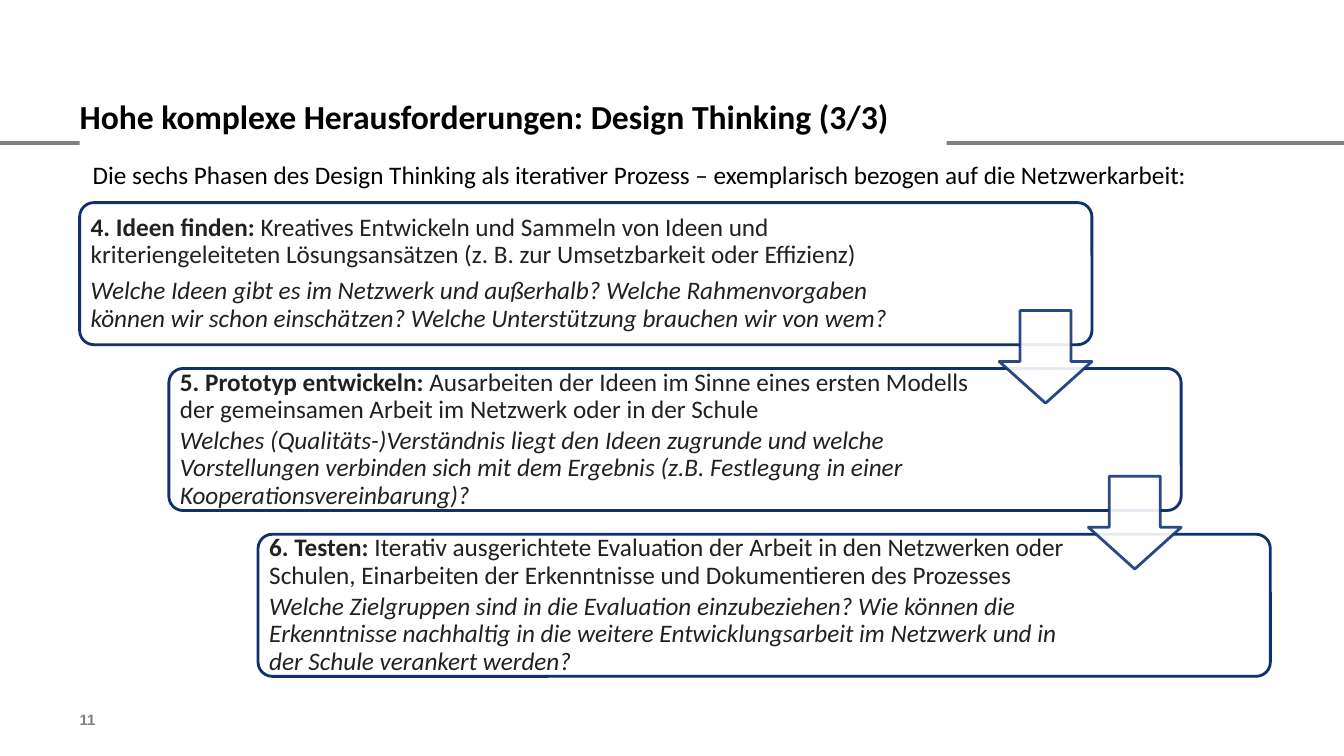
from lxml.etree import SubElement
from pptx import Presentation
from pptx.dml.color import RGBColor
from pptx.enum.shapes import MSO_CONNECTOR as Connector, MSO_SHAPE as Shape
from pptx.enum.text import MSO_ANCHOR as Anchor, PP_ALIGN as Align
from pptx.oxml.ns import qn
from pptx.util import Inches, Pt

PHASES = [
    ("4. Ideen finden: ",
     "Kreatives Entwickeln und Sammeln von Ideen und kriteriengeleiteten "
     "Lösungsansätzen (z. B. zur Umsetzbarkeit oder Effizienz)",
     "Welche Ideen gibt es im Netzwerk und außerhalb? Welche Rahmenvorgaben "
     "können wir schon einschätzen? Welche Unterstützung brauchen wir von wem?",
     8.51, 6.3),
    ("5. Prototyp entwickeln:",
     " Ausarbeiten der Ideen im Sinne eines ersten Modells der gemeinsamen "
     "Arbeit im Netzwerk oder in der Schule",
     "Welches (Qualitäts-)Verständnis liegt den Ideen zugrunde und welche "
     "Vorstellungen verbinden sich mit dem Ergebnis (z.B. Festlegung in einer "
     "Kooperationsvereinbarung)?",
     8.15, 3),
    ("6. Testen: ",
     "Iterativ ausgerichtete Evaluation der Arbeit in den Netzwerken oder "
     "Schulen, Einarbeiten der Erkenntnisse und Dokumentieren des Prozesses",
     "Welche Zielgruppen sind in die Evaluation einzubeziehen? Wie können die "
     "Erkenntnisse nachhaltig in die weitere Entwicklungsarbeit im Netzwerk und "
     "in der Schule verankert werden?",
     8.15, 3),
]
FIRST_LEFT, FIRST_TOP = 0.79, 2.01
STEP_X, STEP_Y = 1.77 / 2, 3.29 / 2


def rgb(hex_color):
    return RGBColor.from_string(hex_color)


class PhaseSlide:
    WHITE, BLACK, GREY = "FFFFFF", "000000", "808080"
    NAVY, ARROW_BLUE, INK = "11306F", "13357A", "202122"

    def __init__(self, slide):
        self.shapes = slide.shapes

    def rule(self, y):
        rule = self.shapes.add_connector(
            Connector.STRAIGHT, 0, Inches(y), Inches(13.33), Inches(y))
        rule.line.color.rgb = rgb(self.GREY)
        rule.line.width = Pt(3.25)
        SubElement(rule._element.spPr, qn("a:effectLst"))

    def shape(self, kind, left, top, width, height, line=None, adjust=()):
        shape = self.shapes.add_shape(
            kind, Inches(left), Inches(top), Inches(width), Inches(height))
        shape.shadow.inherit = False
        shape.fill.solid()
        shape.fill.fore_color.rgb = rgb(self.WHITE)
        if line:
            shape.line.color.rgb = rgb(line)
            shape.line.width = Pt(2)
        else:
            shape.line.fill.background()
        for index, value in enumerate(adjust):
            shape.adjustments[index] = value
        return shape

    def arrow(self, left, top):
        arrow = self.shape(Shape.DOWN_ARROW, left, top, 0.92, 0.92,
                           self.ARROW_BLUE, (0.55, 0.45))
        for color in arrow._element.spPr.iter(qn("a:srgbClr")):
            SubElement(color, qn("a:alpha"), val="90000")

    def textbox(self, left, top, width, height):
        return self.shapes.add_textbox(
            Inches(left), Inches(top), Inches(width), Inches(height))

    def frame(self, shape, margin=0, anchor=Anchor.TOP):
        frame = shape.text_frame
        frame.word_wrap = True
        frame.vertical_anchor = anchor
        frame.margin_left = frame.margin_right = Inches(margin)
        frame.margin_top = frame.margin_bottom = Inches(margin)
        return frame

    def style(self, paragraph, size, color, font="Calibri", bold=None):
        paragraph.alignment = Align.LEFT
        paragraph.font.name = font
        paragraph.font.size = Pt(size)
        paragraph.font.color.rgb = rgb(color)
        paragraph.font.bold = bold

    def label(self, shape, text, size, color, font="Calibri", bold=None):
        paragraph = self.frame(shape).paragraphs[0]
        paragraph.text = text
        self.style(paragraph, size, color, font, bold)

    def phase(self, left, top, name, summary, questions, text_width, gap):
        self.shape(Shape.ROUNDED_RECTANGLE, left, top, 10.04, 1.41,
                   self.NAVY, (0.1,))
        frame = self.frame(
            self.textbox(left + 0.04, top + 0.04, text_width, 1.33),
            0.07, Anchor.MIDDLE)
        heading, details = frame.paragraphs[0], frame.add_paragraph()
        heading.add_run().text = name
        heading.runs[0].font.bold = True
        heading.add_run().text = summary
        details.text = questions
        for paragraph, space in ((heading, gap), (details, 6.3)):
            self.style(paragraph, 18, self.INK)
            paragraph.line_spacing = 0.9
            paragraph.space_after = Pt(space)
        details.font.italic = True


def main():
    deck = Presentation()
    deck.slide_width, deck.slide_height = Inches(13.33), Inches(7.5)
    page = PhaseSlide(deck.slides.add_slide(deck.slide_layouts[6]))

    # Header rule
    page.rule(1.42)

    # Staircase of phases
    corners = [(FIRST_LEFT + i * STEP_X, FIRST_TOP + i * STEP_Y)
               for i in range(len(PHASES))]
    for (left, top), phase in zip(corners, PHASES):
        page.phase(left, top, *phase)

    # Arrows leading to the next phase
    for left, top in corners[:-1]:
        page.arrow(left + 9.12, top + 1.07)

    # Introduction, title and page number
    page.label(page.textbox(0.92, 1.58, 11.16, 5.69),
               "Die sechs Phasen des Design Thinking als iterativer Prozess – "
               "exemplarisch bezogen auf die Netzwerkarbeit:", 18, page.BLACK)
    page.label(page.shape(Shape.RECTANGLE, 0.79, 0.95, 8.6, 0.63),
               "Hohe komplexe Herausforderungen: Design Thinking (3/3)",
               24, page.BLACK, bold=True)
    page.label(page.textbox(0.79, 7.05, 0.42, 0.37),
               "11", 10.7, page.GREY, "Arial", True)

    deck.save("out.pptx")


if __name__ == "__main__":
    main()
